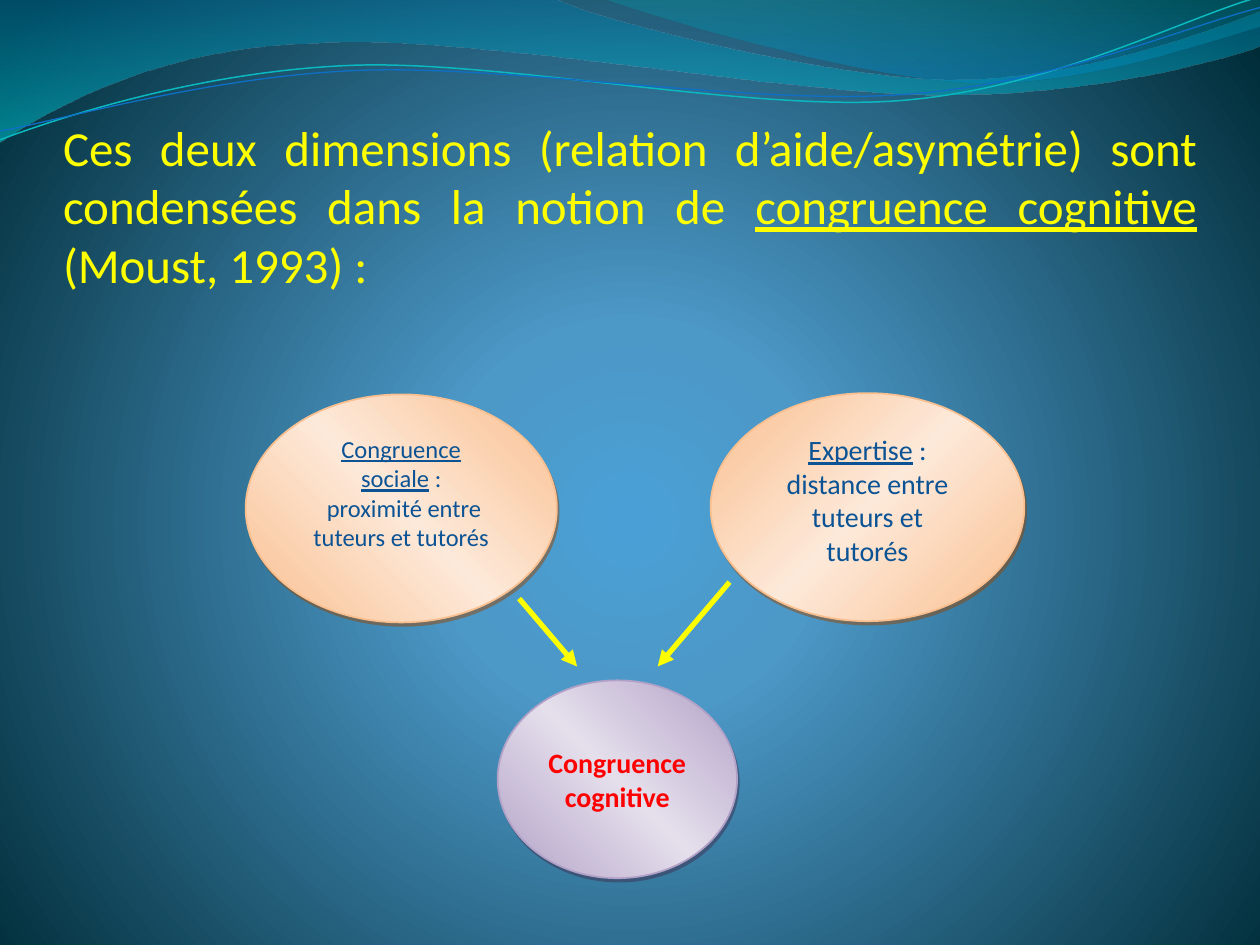
from lxml.etree import SubElement as Sub
from pptx import Presentation
from pptx.dml.color import RGBColor
from pptx.enum.shapes import MSO_CONNECTOR as CONN, MSO_SHAPE as SHAPE
from pptx.enum.text import MSO_ANCHOR as ANCHOR, MSO_AUTO_SIZE as AUTO, PP_ALIGN as ALIGN
from pptx.oxml.ns import qn
from pptx.util import Inches, Pt

COLS, ROWS = 10, 7.5
UNIT = Inches(COLS) // COLS
NBSP = chr(160)
YELLOW, BLUE, RED = "FFFF00", "0B5394", "FF0000"
PEACH = {"edge": "FABF8F", "light": "FDE9D9", "shade": "974706"}
MAUVE = {"edge": "B2A1C7", "light": "E5DFEC", "shade": "3F3151"}

BANDS = [
    ([(0, 0), (4.4, -0.01), (4.76, 0.17, 6.64, 0.63, 7.58, 0.63),
      (8.53, 0.63, 9.58, 0.26, 10, 0.09), (10.01, 0.36),
      (9.83, 0.44, 8.7, 0.76, 7.46, 0.75), (6.22, 0.75, 3.82, 0.28, 2.57, 0.34),
      (1.29, 0.36, 0.46, 0.83, -0.01, 1.13)],
     [(0, "0074A1", 45), (100, "00C6CF", 55)]),
    ([(4.79, -0.01), (5.09, 0.11, 6.82, 0.62, 7.69, 0.65),
      (8.56, 0.69, 9.61, 0.32, 10, 0.21), (10, 0)],
     [(0, "00A1A9", 30), (80, "008BBF", 45)]),
]
STRANDS = [
    ([(0, 1.11), (0.48, 0.93, 1.58, 0.57, 2.77, 0.52),
      (3.95, 0.47, 5.93, 0.89, 7.13, 0.8), (8.33, 0.71, 9.38, 0.15, 9.98, -0.02)],
     "0AB8BF", 0.85),
    ([(0, 1.04), (0.47, 0.96, 1.64, 0.61, 2.83, 0.56),
      (4.03, 0.51, 5.97, 0.84, 7.17, 0.75), (8.36, 0.67, 9.41, 0.21, 10, 0.06)],
     "0F6FC6", 0.75),
]


def rgb(value):
    """Turn a hex string into a colour."""
    return RGBColor.from_string(value)


def grid(*values):
    """Turn grid units into lengths."""
    return [round(v * UNIT) for v in values]


def assign(obj, values):
    """Set attributes from a dict of format values."""
    for name, value in values.items():
        setattr(obj, name, value)


def add_color(parent, value, alpha=100):
    """Append a colour element with its opacity in percent."""
    color = Sub(parent, qn("a:srgbClr"), val=value)
    if alpha < 100:
        Sub(color, qn("a:alpha"), val=str(alpha * 1000))


def gradient(owner, fill, stops, angle=None, center=None):
    """Fill with a linear gradient, or a circular one around a rectangle."""
    fill.gradient()
    grad = next(owner._element.iter(qn("a:gradFill")))
    for child in list(grad):
        grad.remove(child)
    gs_list = Sub(grad, qn("a:gsLst"))
    for pos, *color in stops:
        add_color(Sub(gs_list, qn("a:gs"), pos=str(pos * 1000)), *color)
    if center:
        path = Sub(grad, qn("a:path"), path="circle")
        Sub(path, qn("a:fillToRect"), {k: str(v * 1000) for k, v in zip("ltrb", center)})
    else:
        Sub(grad, qn("a:lin"), ang=str(angle * 60000), scaled="0")


def outline(line, color, width):
    """Draw a solid line."""
    line.color.rgb = rgb(color)
    line.width = Pt(width)


def add_wave(slide, segments, closed):
    """Add one outline, joining the points of each curve into a cubic."""
    start, *rest = segments
    points = [grid(*seg[i:i + 2]) for seg in rest for i in range(0, len(seg), 2)]
    builder = slide.shapes.build_freeform(*grid(*start))
    builder.add_line_segments(points, close=closed)
    sp = builder.convert_to_shape()
    sp.shadow.inherit = False
    edges = iter(list(sp._element.iter(qn("a:lnTo"))))
    for seg in rest:
        first, *others = [next(edges) for _ in range(len(seg) // 2)]
        if others:
            first.tag = qn("a:cubicBezTo")
        for edge in others:
            first.append(edge[0])
            edge.getparent().remove(edge)
    return sp


def add_header_waves(slide):
    """Draw the translucent bands and thin strands at the top."""
    for segments, stops in BANDS:
        sp = add_wave(slide, segments, True)
        gradient(sp, sp.fill, stops, angle=90)
        sp.line.fill.background()
    for segments, color, width in STRANDS:
        sp = add_wave(slide, segments, False)
        sp.fill.background()
        outline(sp.line, color, width)


def write(p, runs, align, size, color, bold=False):
    """Write (text, underlined) runs into a paragraph."""
    p.alignment = align
    for text, underlined in runs:
        r = p.add_run()
        r.text = text
        assign(r.font, {"name": "Calibri", "size": Pt(size), "bold": bold, "underline": underlined})
        r.font.color.rgb = rgb(color)


def add_title(slide, box):
    """Place and format the title."""
    title = slide.shapes.title
    slide.shapes._spTree.append(title._element)
    assign(title, dict(zip(("left", "top", "width", "height"), grid(*box))))
    tf = title.text_frame
    assign(tf, {"word_wrap": True, "auto_size": AUTO.NONE, "vertical_anchor": ANCHOR.BOTTOM,
                "margin_left": 0, "margin_right": 0, "margin_bottom": 0, "margin_top": Inches(0.05)})
    write(tf.paragraphs[0], [
        ("Ces deux dimensions (relation d’aide/asymétrie) sont condensées dans la notion de ", False),
        ("congruence cognitive", True), (" (Moust, 1993) :", False)], ALIGN.JUSTIFY, 28, YELLOW)


def add_bubble(slide, box, palette, paragraphs, size, color, bold=False, top=0.05, flip=False):
    """Add a shaded ellipse with centred text."""
    sp = slide.shapes.add_shape(SHAPE.OVAL, *grid(*box))
    edge = palette["edge"]
    gradient(sp, sp.fill, [(0, edge), (50, palette["light"]), (100, edge)], angle=315)
    outline(sp.line, edge, 1)
    sp.shadow.inherit = False
    effects = next(sp._element.iter(qn("a:effectLst")))
    shadow = Sub(effects, qn("a:outerShdw"), blurRad="0", dist=str(Pt(2.2)),
                 dir=str(63 * 60000), algn="ctr", rotWithShape="0")
    add_color(shadow, palette["shade"], 50)
    if flip:
        sp._element.spPr.xfrm.set("flipH", "1")
    tf = sp.text_frame
    assign(tf, {"word_wrap": True, "vertical_anchor": ANCHOR.TOP, "margin_top": Inches(top)})
    for i, runs in enumerate(paragraphs):
        p = tf.add_paragraph() if i else tf.paragraphs[0]
        write(p, runs, ALIGN.CENTER, size, color, bold)


def add_arrow(slide, start, end):
    """Add a yellow arrow."""
    cxn = slide.shapes.add_connector(CONN.STRAIGHT, *grid(*start, *end))
    outline(cxn.line, YELLOW, 3)
    Sub(cxn.line._get_or_add_ln(), qn("a:tailEnd"), type="triangle")
    Sub(cxn._element.spPr, qn("a:effectLst"))


def add_diagram(slide, box):
    """Draw two ideas leading to cognitive congruence."""
    x, y, w, h = box
    side_h, expert_w, goal_w, goal_h = 1.81, 2.49, 1.9, 1.57
    add_bubble(slide, (x, y + 0.01, 2.47, side_h), PEACH,
               [[("Congruence sociale", True), (f"{NBSP}:", False)],
                [(" proximité entre tuteurs et tutorés", False)]], 14, BLUE)
    add_bubble(slide, (x + 2, y + h - goal_h, goal_w, goal_h), MAUVE,
               [[("Congruence", False)], [("cognitive", False)]], 16, RED, bold=True, top=0.29)
    for start, end in (((2.17, 1.63), (2.63, 2.17)), ((3.84, 1.5), (3.27, 2.17))):
        add_arrow(slide, *[(x + a, y + b) for a, b in (start, end)])
    add_bubble(slide, (x + w - expert_w, y, expert_w, side_h), PEACH,
               [[("Expertise", True), (f"{NBSP}: distance entre tuteurs et tutorés", False)]],
               16, BLUE, flip=True)


def main():
    """Build and save the slide."""
    prs = Presentation()
    assign(prs, {"slide_width": Inches(COLS), "slide_height": Inches(ROWS)})
    slide = prs.slides.add_slide(prs.slide_layouts[5])
    gradient(slide, slide.background.fill, [(0, "4AA0D6"), (25, "4C98C7"), (100, "002C38")],
             center=(10, 110, 10, 100))
    add_header_waves(slide)
    add_title(slide, (0.5, 0.92, 9, 1.41))
    add_diagram(slide, (1.95, 3.12, 6.18, 3.85))
    prs.save("out.pptx")


if __name__ == "__main__":
    main()
